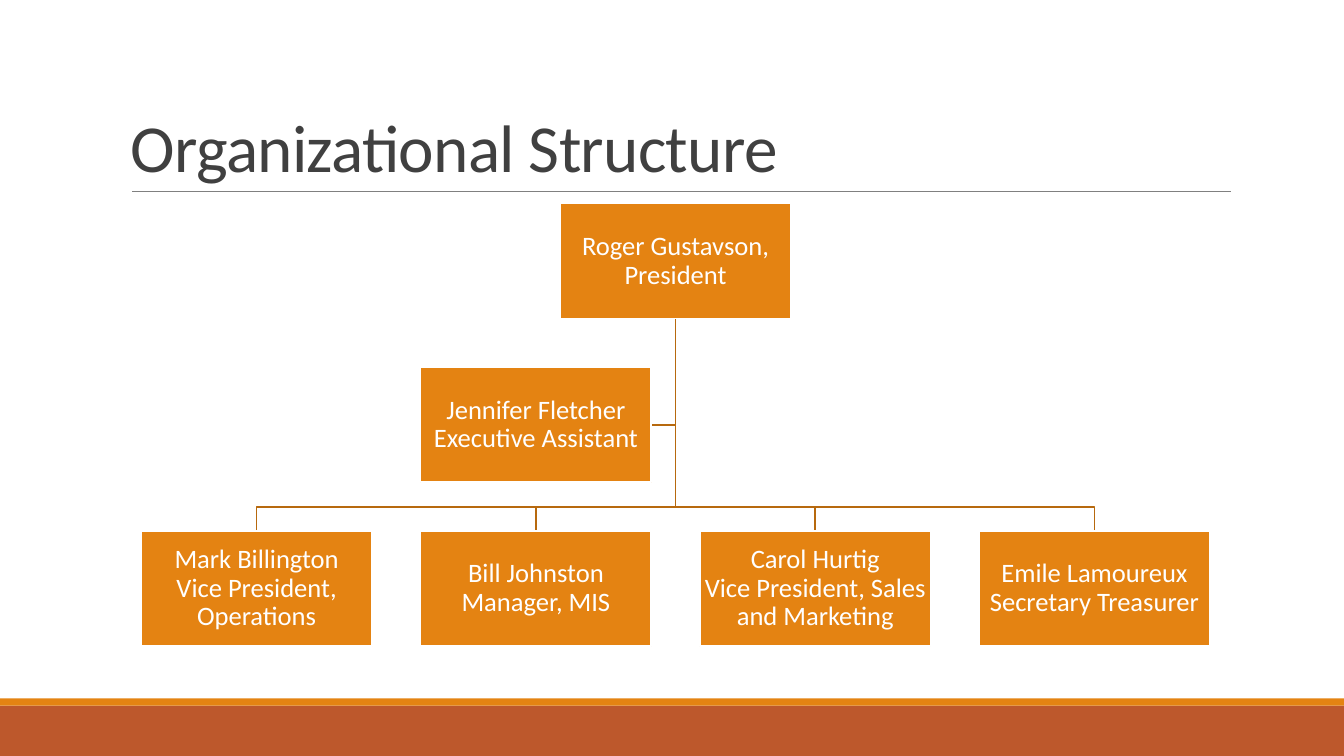
"""Build the organizational structure slide as a four-column, three-row chart."""
from pptx import Presentation
from pptx.dml.color import RGBColor as Color
from pptx.enum.shapes import MSO_CONNECTOR as Link, MSO_SHAPE as Shape
from pptx.enum.text import MSO_ANCHOR as Anchor, PP_ALIGN as Align
from pptx.util import Inches, Pt
from lxml.etree import SubElement
from pptx.oxml.ns import qn

theme = {
    "font": "Calibri", "title_size": 48, "box_size": 19,
    "title": "404040", "white": "FFFFFF", "orange": "E48312",
    "rust": "BD582C", "branch": "B7690E", "rule": "808080",
}
WIDTH, HEIGHT = 13.33, 7.5
LEFT, TOP, COLUMN, ROW = 1.4, 2.02, 2.77, 1.625
BOX_WIDTH, BOX_HEIGHT, GAP = 2.29, 1.14, 0.24
INSET = 0.01

deck = Presentation()
deck.slide_width, deck.slide_height = Inches(WIDTH), Inches(HEIGHT)
page = deck.slides.add_slide(deck.slide_layouts[6])


def add_rectangle(left, top, width, height, fill):
    """Add a plain filled rectangle without outline or shadow."""
    box = page.shapes.add_shape(Shape.RECTANGLE, *map(Inches, (left, top, width, height)))
    box.shadow.inherit = False
    box.fill.solid()
    box.fill.fore_color.rgb = Color.from_string(theme[fill])
    box.line.fill.background()
    return box


def write(box, text, size, color, spacing, frame_format):
    """Write one paragraph into a shape and return it."""
    frame = box.text_frame
    for name, value in frame_format.items():
        setattr(frame, name, value)
    para = frame.paragraphs[0]
    para.text = text
    para.line_spacing = spacing
    for span in para.runs:
        for name, value in {"name": theme["font"], "size": Pt(theme[size])}.items():
            setattr(span.font, name, value)
        span.font.color.rgb = Color.from_string(theme[color])
    return para


add_rectangle(0, 7, WIDTH, 0.5, "rust")
add_rectangle(0, 6.93, WIDTH, 0.07, "orange")

rule = page.shapes.add_connector(Link.STRAIGHT, *map(Inches, (1.31, 1.9, 12.21, 1.9)))
rule.line.color.rgb = Color.from_string(theme["rule"])
rule.line.width = Pt(0.5)
SubElement(rule._element.spPr, qn("a:effectLst"))

title = page.shapes.add_textbox(*map(Inches, (1.2, 0.31, 11, 1.59)))
heading = write(title, "Organizational Structure", "title_size", "title", 0.85,
                {"word_wrap": True, "vertical_anchor": Anchor.BOTTOM})
heading.runs[0]._r.get_or_add_rPr().set("spc", "-50")

center = LEFT + 1.5 * COLUMN + BOX_WIDTH / 2
trunk_top = TOP + BOX_HEIGHT
reports_top = TOP + 2 * ROW
assistant_middle = TOP + ROW + BOX_HEIGHT / 2
assistant_right = LEFT + COLUMN + BOX_WIDTH

branches = [[(center, assistant_middle), (assistant_right, assistant_middle)]]
for column in reversed(range(4)):
    middle = LEFT + column * COLUMN + BOX_WIDTH / 2
    bus = reports_top - GAP
    branches.append([(center, bus), (middle, bus), (middle, reports_top)])

for points in branches:
    outline = page.shapes.build_freeform(Inches(center), Inches(trunk_top))
    outline.add_line_segments([(Inches(x), Inches(y)) for x, y in points], close=False)
    branch = outline.convert_to_shape()
    branch.shadow.inherit = False
    branch.fill.background()
    branch.line.color.rgb = Color.from_string(theme["branch"])
    branch.line.width = Pt(1.25)

people = [
    (1.5, 0, "Roger Gustavson, President"),
    (0, 2, "Mark Billington\nVice President, Operations"),
    (1, 2, "Bill Johnston\nManager, MIS"),
    (2, 2, "Carol Hurtig\nVice President, Sales and Marketing"),
    (3, 2, "Emile Lamoureux\nSecretary Treasurer"),
    (1, 1, "Jennifer Fletcher\nExecutive Assistant"),
]
box_format = {"word_wrap": True, "vertical_anchor": Anchor.MIDDLE}
for side in ("left", "top", "right", "bottom"):
    box_format[f"margin_{side}"] = Inches(INSET)

for column, row, label in people:
    box = add_rectangle(LEFT + column * COLUMN, TOP + row * ROW, BOX_WIDTH, BOX_HEIGHT, "orange")
    box.line.color.rgb = Color.from_string(theme["white"])
    box.line.width = Pt(1.25)
    para = write(box, label, "box_size", "white", 0.9, box_format)
    para.alignment = Align.CENTER

deck.save("out.pptx")
